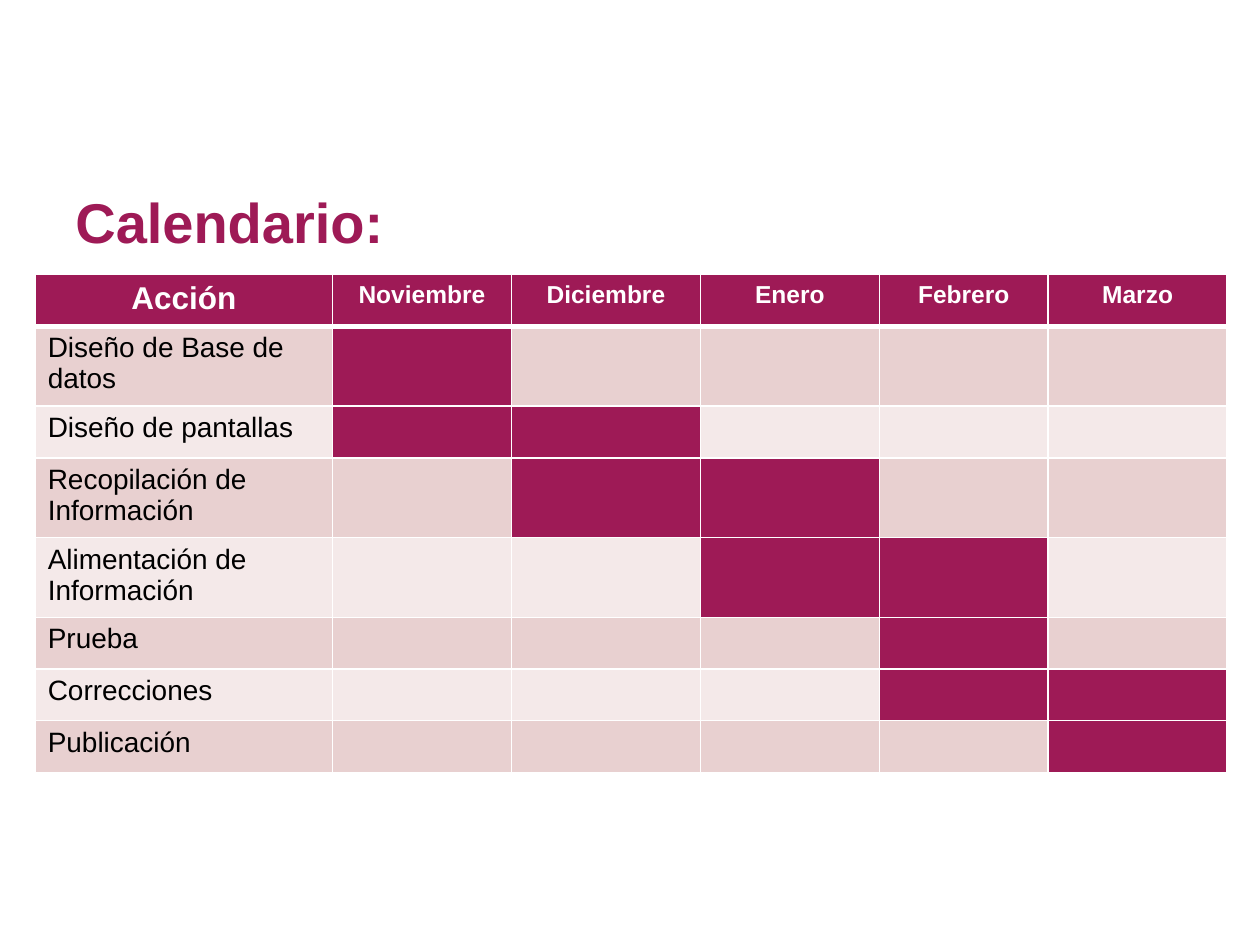
from dataclasses import dataclass

import pptx
import pptx.dml.color
import pptx.enum.text
import pptx.oxml
import pptx.oxml.ns
import pptx.util
from pptx.util import Inches

RGB = pptx.dml.color.RGBColor.from_string
ALIGN = pptx.enum.text.PP_ALIGN


@dataclass(frozen=True)
class Theme:
    font: str = "Arial"
    accent: str = "9E1A56"
    bands: tuple = ("E8D0D0", "F4E9E9")
    white: str = "FFFFFF"
    black: str = "000000"
    title_size: int = 32
    corner_size: int = 18
    month_size: int = 14
    action_size: int = 16
    thin_line: int = 1
    thick_line: int = 3


THEME = Theme()
MONTHS = ["Noviembre", "Diciembre", "Enero", "Febrero", "Marzo"]
ACTIONS = [
    ("Diseño de Base de datos", {"Noviembre"}),
    ("Diseño de pantallas", {"Noviembre", "Diciembre"}),
    ("Recopilación de Información", {"Diciembre", "Enero"}),
    ("Alimentación de Información", {"Enero", "Febrero"}),
    ("Prueba", {"Febrero"}),
    ("Correcciones", {"Febrero", "Marzo"}),
    ("Publicación", {"Marzo"}),
]
COLUMN_WIDTHS = [2.36, 1.42, 1.5, 1.42, 1.34, 1.42]
ROW_HEIGHT = 0.41


def write_text(text_frame, text, size, color, bold, alignment=ALIGN.LEFT):
    paragraph = text_frame.paragraphs[0]
    paragraph.alignment = alignment
    run = paragraph.add_run()
    run.text = text
    run.font.color.rgb = RGB(color)
    values = {"name": THEME.font, "size": pptx.util.Pt(size), "bold": bold}
    for name, value in values.items():
        setattr(run.font, name, value)


def style_cell(cell, fill, top=THEME.thin_line, bottom=THEME.thin_line):
    properties = cell._tc.get_or_add_tcPr()
    widths = {"lnL": THEME.thin_line, "lnR": THEME.thin_line, "lnT": top, "lnB": bottom}
    for tag, width in widths.items():
        properties.append(pptx.oxml.parse_xml(
            f'<a:{tag} {pptx.oxml.ns.nsdecls("a")} w="{pptx.util.Pt(width)}">'
            f'<a:solidFill><a:srgbClr val="{THEME.white}"/></a:solidFill></a:{tag}>'
        ))
    cell.fill.solid()
    cell.fill.fore_color.rgb = RGB(fill)


def add_title(slide, left, top, width, height):
    text_frame = slide.shapes.add_textbox(left, top, width, height).text_frame
    values = {
        "word_wrap": True,
        "margin_top": Inches(0.1),
        "vertical_anchor": pptx.enum.text.MSO_ANCHOR.TOP,
    }
    for name, value in values.items():
        setattr(text_frame, name, value)
    write_text(text_frame, "Calendario:", THEME.title_size, THEME.accent, True)


def add_calendar(slide, left, top, width, height):
    table = slide.shapes.add_table(
        len(ACTIONS) + 1, len(MONTHS) + 1, left, top, width, height
    ).table
    for column, column_width in zip(table.columns, COLUMN_WIDTHS):
        column.width = Inches(column_width)
    for row in table.rows:
        row.height = Inches(ROW_HEIGHT)

    for index, label in enumerate(["Acción"] + MONTHS):
        cell = table.cell(0, index)
        size = THEME.month_size if index else THEME.corner_size
        style_cell(cell, THEME.accent, bottom=THEME.thick_line)
        write_text(cell.text_frame, label, size, THEME.white, True, ALIGN.CENTER)

    for row_index, (action, active_months) in enumerate(ACTIONS, 1):
        band = THEME.bands[(row_index - 1) % 2]
        line_above = THEME.thick_line if row_index == 1 else THEME.thin_line
        action_cell = table.cell(row_index, 0)
        style_cell(action_cell, band, top=line_above)
        write_text(action_cell.text_frame, action, THEME.action_size, THEME.black, False)
        for column_index, month in enumerate(MONTHS, 1):
            fill = THEME.accent if month in active_months else band
            style_cell(table.cell(row_index, column_index), fill, top=line_above)


def main():
    presentation = pptx.Presentation()
    presentation.slide_width = Inches(10)
    presentation.slide_height = Inches(7.5)
    slide = presentation.slides.add_slide(presentation.slide_layouts[6])
    add_title(slide, Inches(0.5), Inches(1.39), Inches(9), Inches(0.55))
    table_height = Inches(ROW_HEIGHT * (len(ACTIONS) + 1))
    add_calendar(slide, Inches(0.28), Inches(2.18), Inches(sum(COLUMN_WIDTHS)), table_height)
    presentation.save("out.pptx")


if __name__ == "__main__":
    main()
